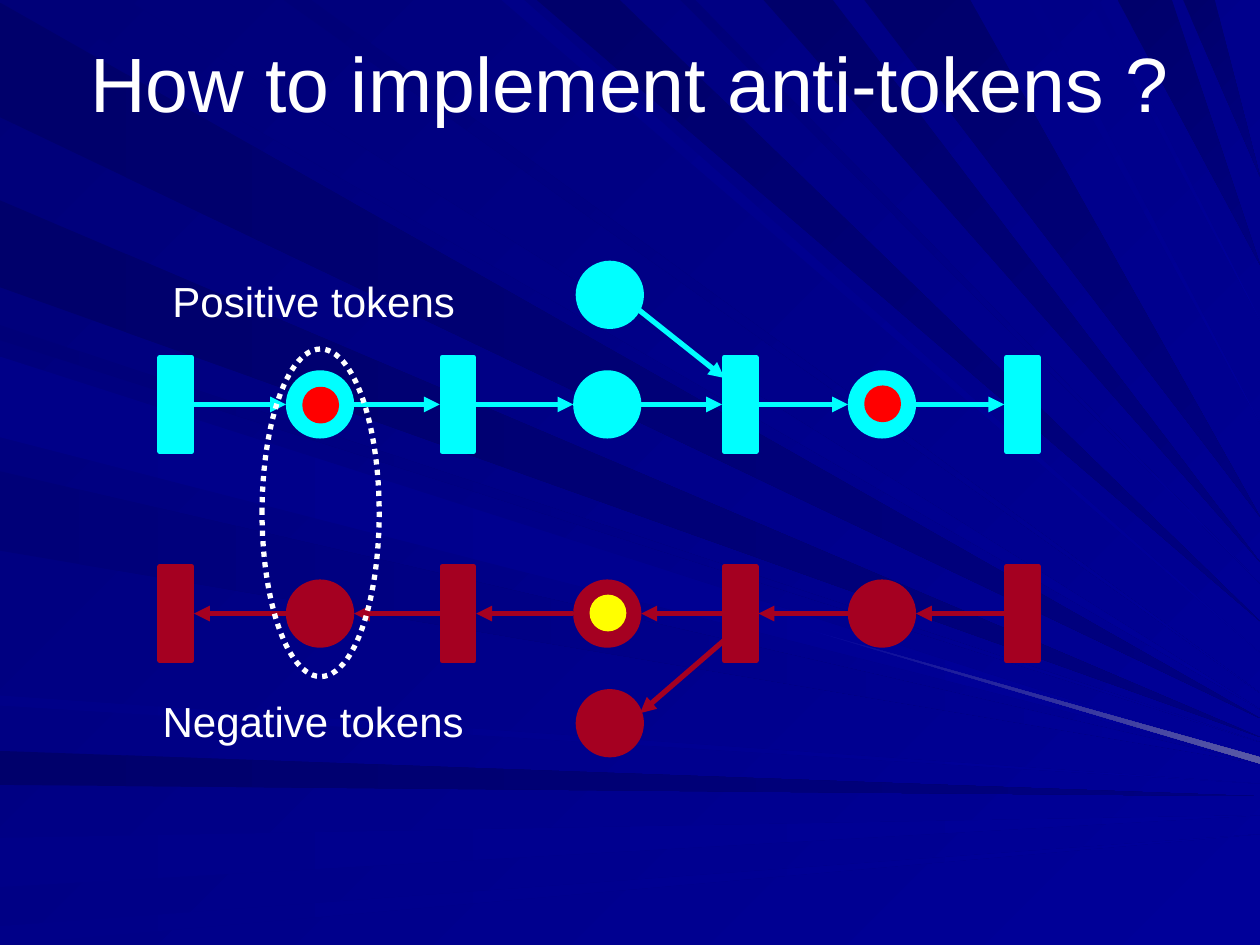
"""Build the slide on implementing anti-tokens with two opposed token nets."""
from typing import NamedTuple

import pptx
import pptx.dml.color
import pptx.enum.dml
import pptx.enum.shapes
import pptx.enum.text
import pptx.oxml.ns
import pptx.util

RGBColor = pptx.dml.color.RGBColor
Inches = pptx.util.Inches
SHAPE = pptx.enum.shapes.MSO_SHAPE

CYAN = RGBColor(0x00, 0xFF, 0xFF)
CRIMSON = RGBColor(0xA5, 0x00, 0x21)
RED = RGBColor(0xFF, 0x00, 0x00)
YELLOW = RGBColor(0xFF, 0xFF, 0x00)
WHITE = RGBColor(0xFF, 0xFF, 0xFF)
INK = RGBColor(0x00, 0x00, 0x6B)
MIDNIGHT = RGBColor(0x00, 0x00, 0x78)
NAVY = RGBColor(0x00, 0x00, 0x80)
INDIGO = RGBColor(0x00, 0x00, 0x88)
ROYAL = RGBColor(0x00, 0x00, 0x99)
GLOW = RGBColor(0x5A, 0x5A, 0xA6)

DARK, MEDIUM, LIGHT, LIT = (INK, NAVY), (MIDNIGHT, ROYAL), (INDIGO, ROYAL), (ROYAL, GLOW)
SLIDE_WIDTH, SLIDE_HEIGHT = 10, 7.5
BAR_WIDTH, BAR_HEIGHT = 0.25, 0.75
PLACE_SIZE, TOKEN_SIZE = 0.5, 0.25
BAR_LEFTS = [1.27 + 2.24 * step for step in range(4)]
PLACE_LEFTS = [2.29, 4.57, 6.75]
ARROW_GAP = 0.02


class Ray(NamedTuple):
    near: float
    far: float
    tip: float
    tone: tuple[RGBColor, RGBColor]


class Net(NamedTuple):
    color: RGBColor
    axis: float
    branch_top: float
    branch_arrow: tuple[float, float, float, float]
    arrow_end: str


class Token(NamedTuple):
    color: RGBColor
    left: float
    top: float


LEFT_RAYS = [
    Ray(0.02, 0.93, 5.7, DARK),
    Ray(5.96, 6.23, 6.32, DARK),
    Ray(6.65, 7.04, 6.47, LIGHT),
    Ray(7.35, 7.5, 6.62, LIGHT),
    Ray(2.58, 2.7, 5.89, MEDIUM),
    Ray(1.59, 2.28, 5.85, DARK),
    Ray(3.74, 4.37, 6.06, MEDIUM),
    Ray(5.52, 5.6, 6.22, LIGHT),
    Ray(2.83, 3.47, 6.04, LIGHT),
]
TOP_RAYS = [
    Ray(0.26, 1.01, 5.63, MEDIUM),
    Ray(3.98, 4.16, 5.18, LIGHT),
    Ray(4.26, 4.92, 4.93, DARK),
    Ray(5.4, 5.52, 4.63, MEDIUM),
    Ray(6.06, 6.61, 4.46, DARK),
    Ray(8.87, 9.3, 2.1, DARK),
    Ray(9.39, 9.64, 1.4, DARK),
    Ray(2.25, 2.47, 5.5, MEDIUM),
    Ray(6.86, 7.7, 4.1, DARK),
    Ray(8.15, 8.24, 3.36, LIGHT),
    Ray(8.65, 8.72, 2.54, LIGHT),
]
NETS = [
    Net(CYAN, 3.21, 2.09, (4.92, 2.34, 5.75, 3), "tailEnd"),
    Net(CRIMSON, 4.87, 5.49, (5.08, 5.66, 5.75, 5.08), "headEnd"),
]
TOKENS = [Token(RED, 6.88, 3.08), Token(YELLOW, 4.7, 4.74), Token(RED, 2.42, 3.09)]


def paint(fill, start: RGBColor, end: RGBColor, angle: int) -> None:
    fill.gradient()
    fill.gradient_angle = -angle % 360
    for stop, color in zip(fill.gradient_stops, (start, end)):
        stop.color.rgb = color


def draw_beam(shapes, points: list[tuple[float, float]], tone: tuple[RGBColor, RGBColor], angle: int) -> None:
    first, *others = [(Inches(x), Inches(y)) for x, y in points]
    outline = shapes.build_freeform(*first)
    outline.add_line_segments(others, close=True)
    beam = outline.convert_to_shape()
    beam.shadow.inherit = False
    beam.line.fill.background()
    paint(beam.fill, *tone, angle)


def draw_backdrop(shapes) -> None:
    for ray in LEFT_RAYS:
        draw_beam(shapes, [(0, ray.near), (0, ray.far), (SLIDE_WIDTH, ray.tip)], ray.tone, 0)
    for ray in TOP_RAYS:
        draw_beam(shapes, [(ray.near, 0), (ray.far, 0), (SLIDE_WIDTH, ray.tip)], ray.tone, 45)
    draw_beam(shapes, [(6.35, 4.98), (SLIDE_WIDTH, 6.01), (SLIDE_WIDTH, 6.06)], LIT, 0)


def draw_shape(shapes, kind, left: float, top: float, width: float, height: float,
               color: RGBColor, filled: bool = True):
    figure = shapes.add_shape(kind, Inches(left), Inches(top), Inches(width), Inches(height))
    figure.shadow.inherit = False
    figure.line.color.rgb = color
    figure.line.width = pptx.util.Pt(3)
    if filled:
        figure.fill.solid()
        figure.fill.fore_color.rgb = color
    else:
        figure.fill.background()
    return figure


def draw_arrow(shapes, x1: float, y1: float, x2: float, y2: float, color: RGBColor, end: str) -> None:
    arrow = shapes.add_connector(pptx.enum.shapes.MSO_CONNECTOR.STRAIGHT,
                                 Inches(x1), Inches(y1), Inches(x2), Inches(y2))
    arrow.line.color.rgb = color
    arrow.line.width = pptx.util.Pt(3)
    qn = pptx.oxml.ns.qn
    properties = arrow.element.spPr
    properties.find(qn("a:ln")).append(properties.makeelement(qn(f"a:{end}"), {"type": "triangle"}))
    properties.append(properties.makeelement(qn("a:effectLst"), {}))


def draw_net(shapes, net: Net) -> None:
    for left in BAR_LEFTS:
        draw_shape(shapes, SHAPE.RECTANGLE, left, net.axis - BAR_HEIGHT / 2, BAR_WIDTH, BAR_HEIGHT, net.color)
    places = [(left, net.axis - PLACE_SIZE / 2) for left in PLACE_LEFTS] + [(4.59, net.branch_top)]
    for left, top in places:
        draw_shape(shapes, SHAPE.OVAL, left, top, PLACE_SIZE, PLACE_SIZE, net.color)
    nodes = sorted([(left, BAR_WIDTH) for left in BAR_LEFTS] + [(left, PLACE_SIZE) for left in PLACE_LEFTS])
    for (left, width), (following, _) in zip(nodes, nodes[1:]):
        draw_arrow(shapes, left + width + ARROW_GAP, net.axis, following - ARROW_GAP, net.axis,
                   net.color, net.arrow_end)
    draw_arrow(shapes, *net.branch_arrow, net.color, net.arrow_end)


def write(holder, text: str, *, left: float, top: float, width: float, height: float,
          size: int, wrap: bool = True, anchor=pptx.enum.text.MSO_ANCHOR.TOP) -> None:
    holder.left, holder.top = Inches(left), Inches(top)
    holder.width, holder.height = Inches(width), Inches(height)
    frame = holder.text_frame
    frame.word_wrap = wrap
    frame.vertical_anchor = anchor
    if not wrap:
        frame.auto_size = pptx.enum.text.MSO_AUTO_SIZE.SHAPE_TO_FIT_TEXT
    paragraph = frame.paragraphs[0]
    paragraph.alignment = pptx.enum.text.PP_ALIGN.CENTER
    run = paragraph.add_run()
    run.text = text
    run.font.name = "Arial"
    run.font.size = pptx.util.Pt(size)
    run.font.color.rgb = WHITE


def main() -> None:
    deck = pptx.Presentation()
    deck.slide_width, deck.slide_height = Inches(SLIDE_WIDTH), Inches(SLIDE_HEIGHT)
    slide = deck.slides.add_slide(deck.slide_layouts[5])
    shapes = slide.shapes
    paint(slide.background.fill, MIDNIGHT, ROYAL, 45)
    backdrop = shapes.add_group_shape()
    draw_backdrop(backdrop.shapes)
    shapes.element.insert(2, backdrop.element)
    write(shapes.title, "How to implement anti-tokens ?", left=0.5, top=0.02, width=9, height=1.25,
          size=44, anchor=pptx.enum.text.MSO_ANCHOR.MIDDLE)
    for net in NETS:
        draw_net(shapes.add_group_shape().shapes, net)
    for text, left, top, width in [("Positive tokens", 1.27, 2.14, 2.44), ("Negative tokens", 1.19, 5.47, 2.59)]:
        write(shapes.add_textbox(0, 0, 0, 0), text, left=left, top=top, width=width, height=0.5,
              size=24, wrap=False)
    for token in TOKENS:
        draw_shape(shapes, SHAPE.OVAL, token.left, token.top, TOKEN_SIZE, TOKEN_SIZE, token.color)
    pairing = draw_shape(shapes, SHAPE.OVAL, 2.08, 2.77, 0.93, 2.6, WHITE, filled=False)
    pairing.line.dash_style = pptx.enum.dml.MSO_LINE.ROUND_DOT
    deck.save("out.pptx")


if __name__ == "__main__":
    main()
